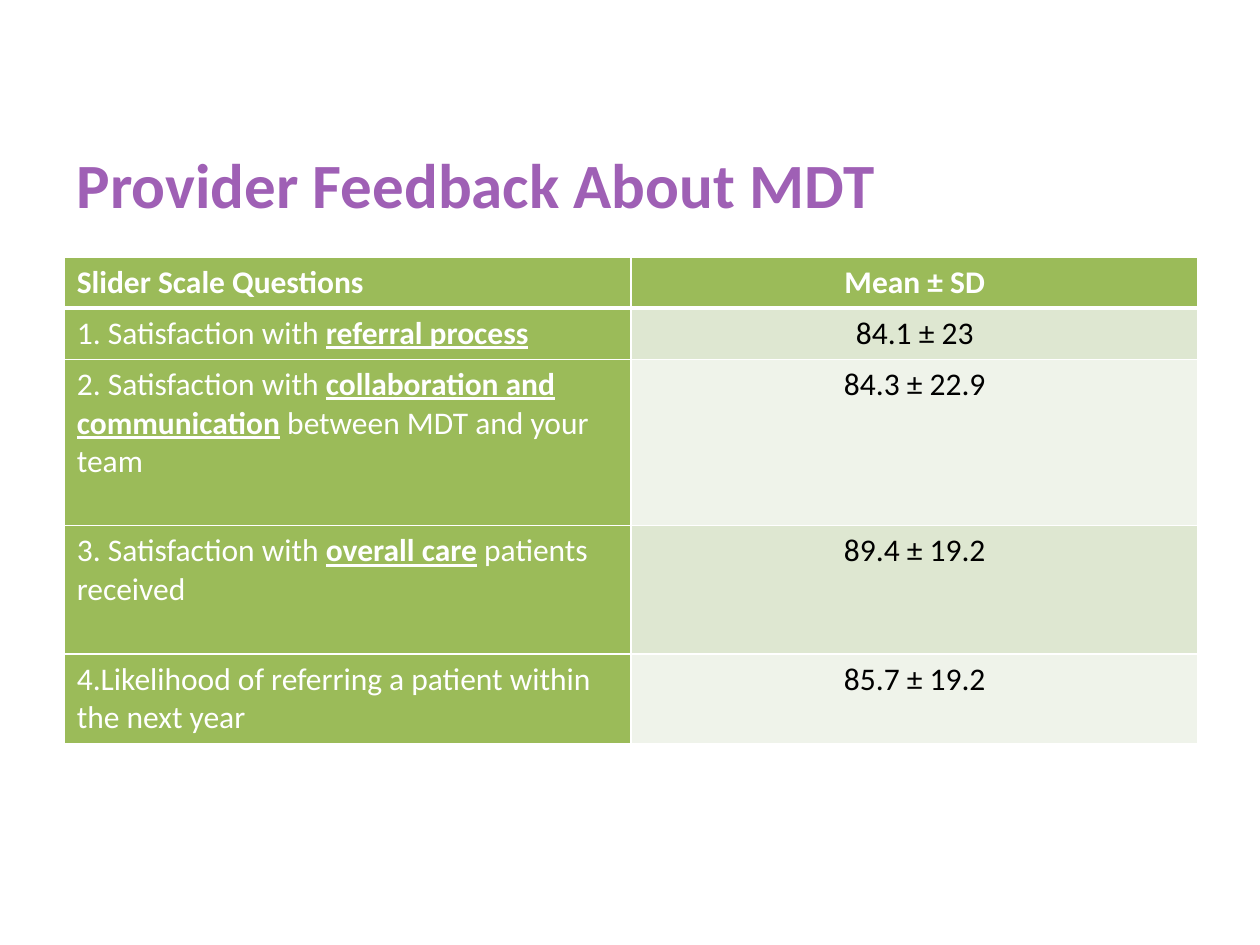
from dataclasses import dataclass

from pptx import Presentation
from pptx.dml.color import RGBColor as RGB
from pptx.enum.text import MSO_ANCHOR as Anchor, PP_ALIGN as Align
from pptx.oxml.ns import qn
from pptx.util import Inches, Pt
from lxml.etree import SubElement

COLORS = {
    "title": "9F60B5",
    "green": "9BBB59",
    "band_dark": "DEE7D1",
    "band_light": "EFF3EA",
    "white": "FFFFFF",
    "black": "000000",
}
FONT = "Calibri"
LEFT, WIDTH = 0.51, 9
TITLE_TOP, TABLE_TOP = 0.87, 2.04


@dataclass
class Question:
    before: str
    key: str
    after: str
    score: str
    height: float


HEADER = ("Slider Scale Questions", "Mean ± SD")
HEADER_HEIGHT = 0.4
QUESTIONS = [
    Question("1. Satisfaction with ", "referral process", "", "84.1 ± 23", 0.4),
    Question("2. Satisfaction with ", "collaboration and communication",
             " between MDT and your team", "84.3 ± 22.9", 1.32),
    Question("3. Satisfaction with ", "overall care", " patients received",
             "89.4 ± 19.2", 1.02),
    Question("4.Likelihood of referring a patient within the next year", "", "",
             "85.7 ± 19.2", 0.7),
]


def add_run(p, text: str, color: str, size: float = 18, **fmt) -> None:
    r = p.add_run()
    r.text = text
    values = {"name": FONT, "size": Pt(size), "bold": False, **fmt}
    for name, value in values.items():
        setattr(r.font, name, value)
    r.font.color.rgb = RGB.from_string(COLORS[color])


def set_borders(cell, top: float, bottom: float) -> None:
    tc_pr = cell._tc.get_or_add_tcPr()
    for side, width in {"L": 1, "R": 1, "T": top, "B": bottom}.items():
        ln = SubElement(tc_pr, qn(f"a:ln{side}"), w=str(Pt(width)))
        fill = SubElement(ln, qn("a:solidFill"))
        SubElement(fill, qn("a:srgbClr"), val=COLORS["white"])


def style_cell(cell, row: int, fill: str, align: Align):
    set_borders(cell, 3 if row == 1 else 1, 3 if row == 0 else 1)
    cell.fill.solid()
    cell.fill.fore_color.rgb = RGB.from_string(COLORS[fill])
    p = cell.text_frame.paragraphs[0]
    p.alignment = align
    return p


def add_title(slide, text: str) -> None:
    sp = slide.shapes.title
    box = {"left": LEFT, "top": TITLE_TOP, "width": WIDTH, "height": 1.17}
    for name, value in box.items():
        setattr(sp, name, Inches(value))
    tf = sp.text_frame
    tf.vertical_anchor = Anchor.MIDDLE
    p = tf.paragraphs[0]
    p.alignment = Align.LEFT
    add_run(p, text, "title", 36, bold=True)


def add_feedback_table(slide) -> None:
    heights = [HEADER_HEIGHT] + [q.height for q in QUESTIONS]
    table = slide.shapes.add_table(
        len(heights), len(HEADER), Inches(LEFT), Inches(TABLE_TOP),
        Inches(WIDTH), Inches(sum(heights))).table
    table.first_col = True
    for row, height in zip(table.rows, heights):
        row.height = Inches(height)

    for col, (text, align) in enumerate(zip(HEADER, (Align.LEFT, Align.CENTER))):
        p = style_cell(table.cell(0, col), 0, "green", align)
        add_run(p, text, "white", bold=True)

    for row, q in enumerate(QUESTIONS, 1):
        p = style_cell(table.cell(row, 0), row, "green", Align.LEFT)
        add_run(p, q.before, "white")
        if q.key:
            add_run(p, q.key, "white", bold=True, underline=True)
        if q.after:
            add_run(p, q.after, "white")
        band = "band_dark" if row % 2 else "band_light"
        p = style_cell(table.cell(row, 1), row, band, Align.CENTER)
        add_run(p, q.score, "black")


def main() -> None:
    prs = Presentation()
    prs.slide_width, prs.slide_height = Inches(10), Inches(7.5)
    slide = prs.slides.add_slide(prs.slide_layouts.get_by_name("Title Only"))
    add_title(slide, "Provider Feedback About MDT")
    add_feedback_table(slide)
    prs.save("out.pptx")


if __name__ == "__main__":
    main()
